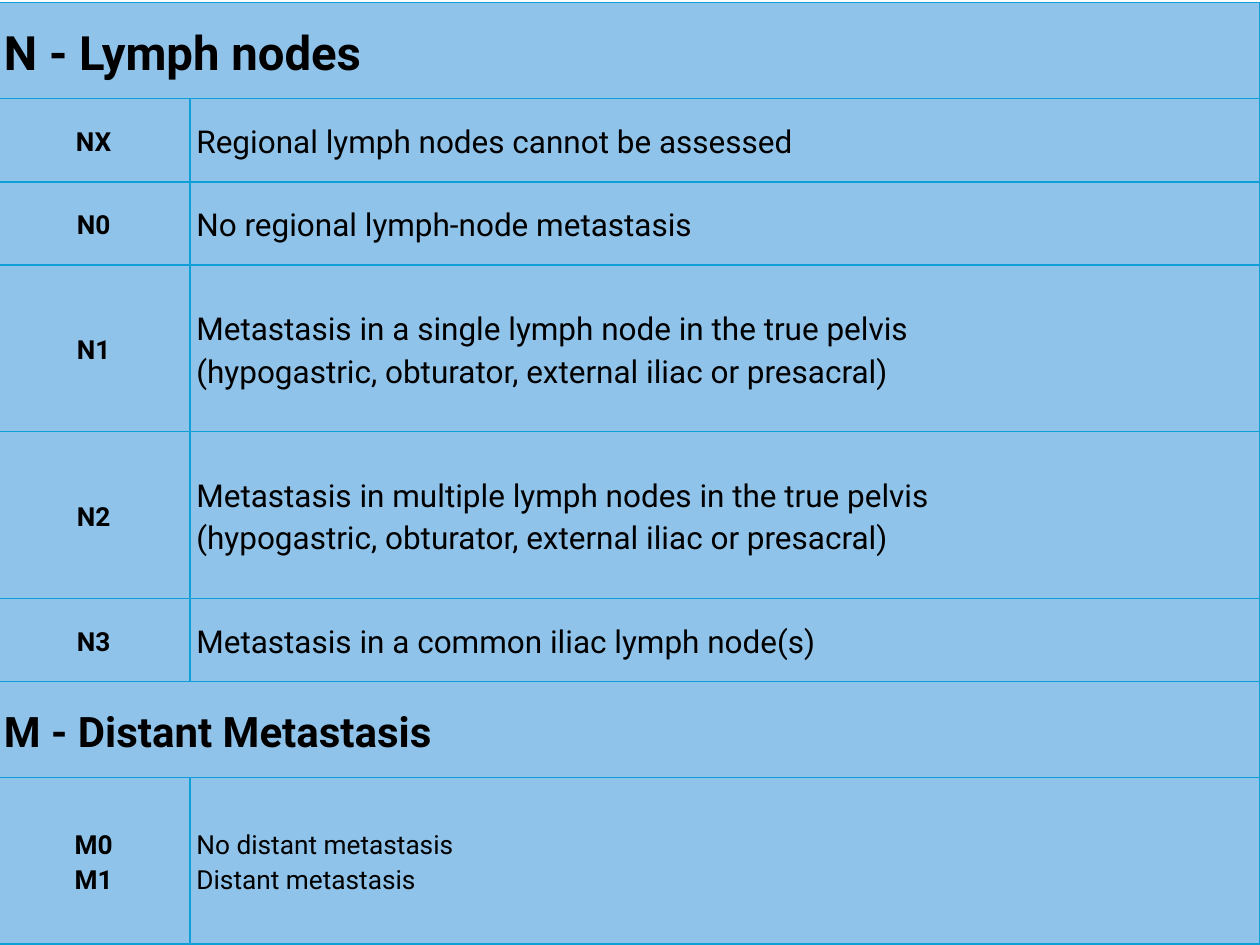
from dataclasses import dataclass

import lxml.etree
import pptx
import pptx.dml.color
import pptx.enum.text
import pptx.oxml.ns
import pptx.table
import pptx.util

Pt = pptx.util.Pt
ALIGN = pptx.enum.text.PP_ALIGN

FONT = "Roboto"
CELL_FILL = "90C3EA"
BORDER = "0F9ED5"
TEXT = "000000"
CODE_SIZE = 15
COLUMN_WIDTHS = (110, 611.5)
SINGLE, DOUBLE, HEADING = 47.6, 95.2, 54.8  # row heights


@dataclass
class StageRow:
    """One row of the staging table; a row without a code is a heading."""
    height: float
    text: str
    size: float
    code: str = ""


ROWS = [
    StageRow(HEADING, "N - Lymph nodes", 27),
    StageRow(SINGLE, "Regional lymph nodes cannot be assessed", 18, "NX"),
    StageRow(SINGLE, "No regional lymph-node metastasis", 18, "N0"),
    StageRow(DOUBLE, "Metastasis in a single lymph node in the true pelvis\n"
             "(hypogastric, obturator, external iliac or presacral)", 18, "N1"),
    StageRow(DOUBLE, "Metastasis in multiple lymph nodes in the true pelvis\n"
             "(hypogastric, obturator, external iliac or presacral)", 18, "N2"),
    StageRow(SINGLE, "Metastasis in a common iliac lymph node(s)", 18, "N3"),
    StageRow(HEADING, "M - Distant Metastasis", 24),
    StageRow(DOUBLE, "No distant metastasis\nDistant metastasis", 15, "M0\nM1"),
]


def color(value: str) -> pptx.dml.color.RGBColor:
    return pptx.dml.color.RGBColor.from_string(value)


def style_cell(cell: pptx.table._Cell) -> None:
    """Set fill, margins, anchor and the four borders."""
    cell.fill.solid()
    cell.fill.fore_color.rgb = color(CELL_FILL)
    cell.margin_left = cell.margin_right = Pt(3.75)
    cell.margin_top = cell.margin_bottom = Pt(0)
    cell.vertical_anchor = pptx.enum.text.MSO_ANCHOR.MIDDLE
    qn = pptx.oxml.ns.qn
    properties = cell._tc.get_or_add_tcPr()
    for index, side in enumerate(("lnL", "lnR", "lnT", "lnB")):
        line = lxml.etree.Element(qn(f"a:{side}"), w=str(Pt(1)))
        fill = lxml.etree.SubElement(line, qn("a:solidFill"))
        lxml.etree.SubElement(fill, qn("a:srgbClr"), val=BORDER)
        properties.insert(index, line)


def write_cell(cell: pptx.table._Cell, text: str, size: float,
               bold: bool, align: ALIGN) -> None:
    cell.text_frame.text = text
    for para in cell.text_frame.paragraphs:
        para.alignment = align
        para.line_spacing = 1.15
        para.font.name = FONT
        para.font.size = Pt(size)
        para.font.bold = bold
        para.font.color.rgb = color(TEXT)


def add_staging_table(page: pptx.slide.Slide, rows: list[StageRow]) -> None:
    frame = page.shapes.add_table(
        len(rows), len(COLUMN_WIDTHS), Pt(-1.5), Pt(1.5),
        Pt(sum(COLUMN_WIDTHS)), Pt(sum(row.height for row in rows)))
    table = frame.table
    for column, width in zip(table.columns, COLUMN_WIDTHS):
        column.width = Pt(width)
    for index, row in enumerate(rows):
        table.rows[index].height = Pt(row.height)
        first, second = table.cell(index, 0), table.cell(index, 1)
        style_cell(first)
        style_cell(second)
        if row.code:
            write_cell(first, row.code, CODE_SIZE, True, ALIGN.CENTER)
            write_cell(second, row.text, row.size, False, ALIGN.LEFT)
        else:
            first.merge(second)
            write_cell(first, row.text, row.size, True, ALIGN.LEFT)


def main() -> None:
    deck = pptx.Presentation()
    deck.slide_width, deck.slide_height = Pt(720), Pt(540)
    page = deck.slides.add_slide(deck.slide_layouts[6])
    add_staging_table(page, ROWS)
    deck.save("out.pptx")


if __name__ == "__main__":
    main()
